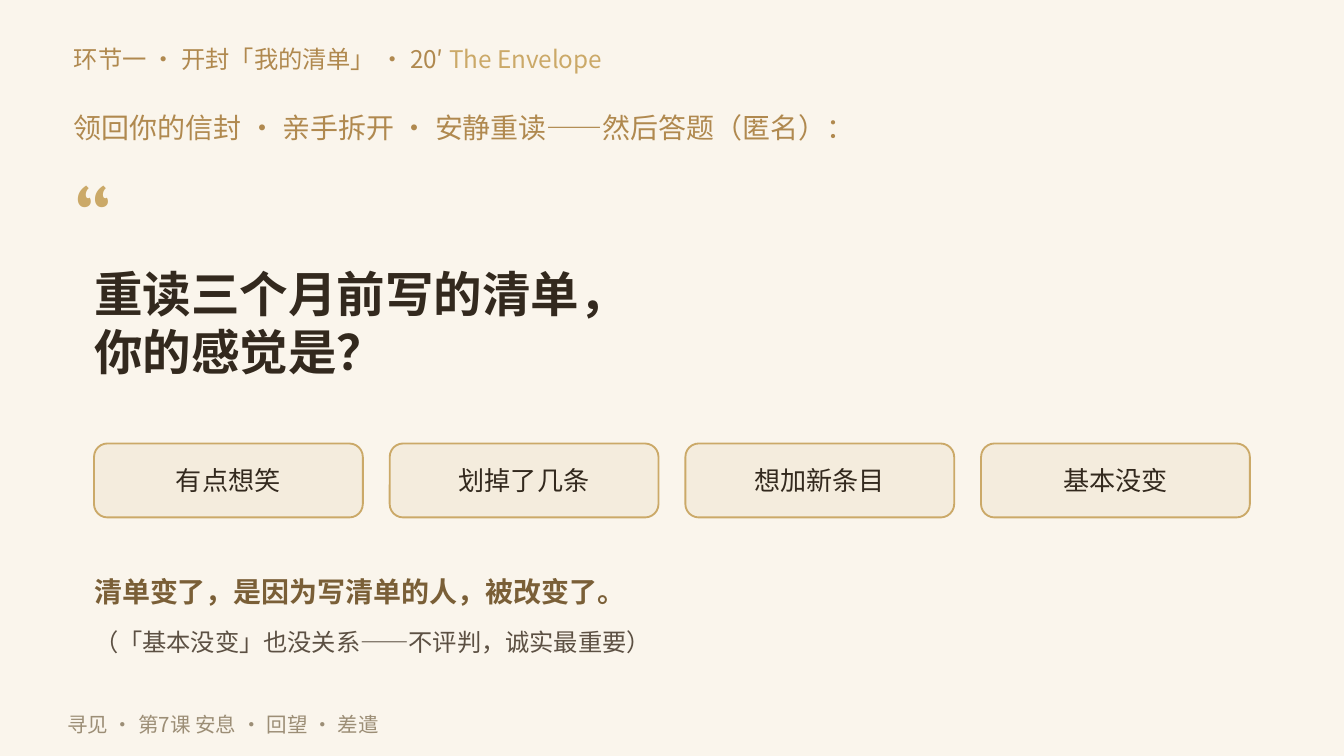
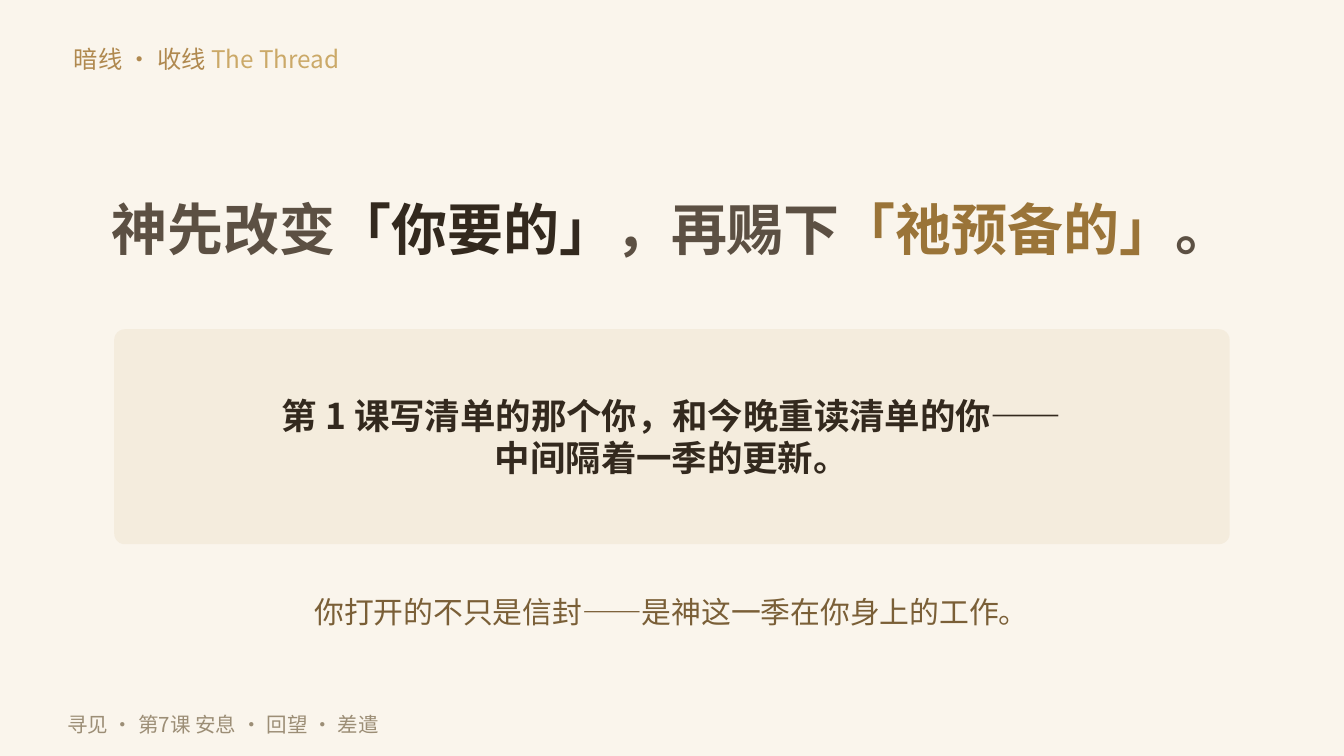
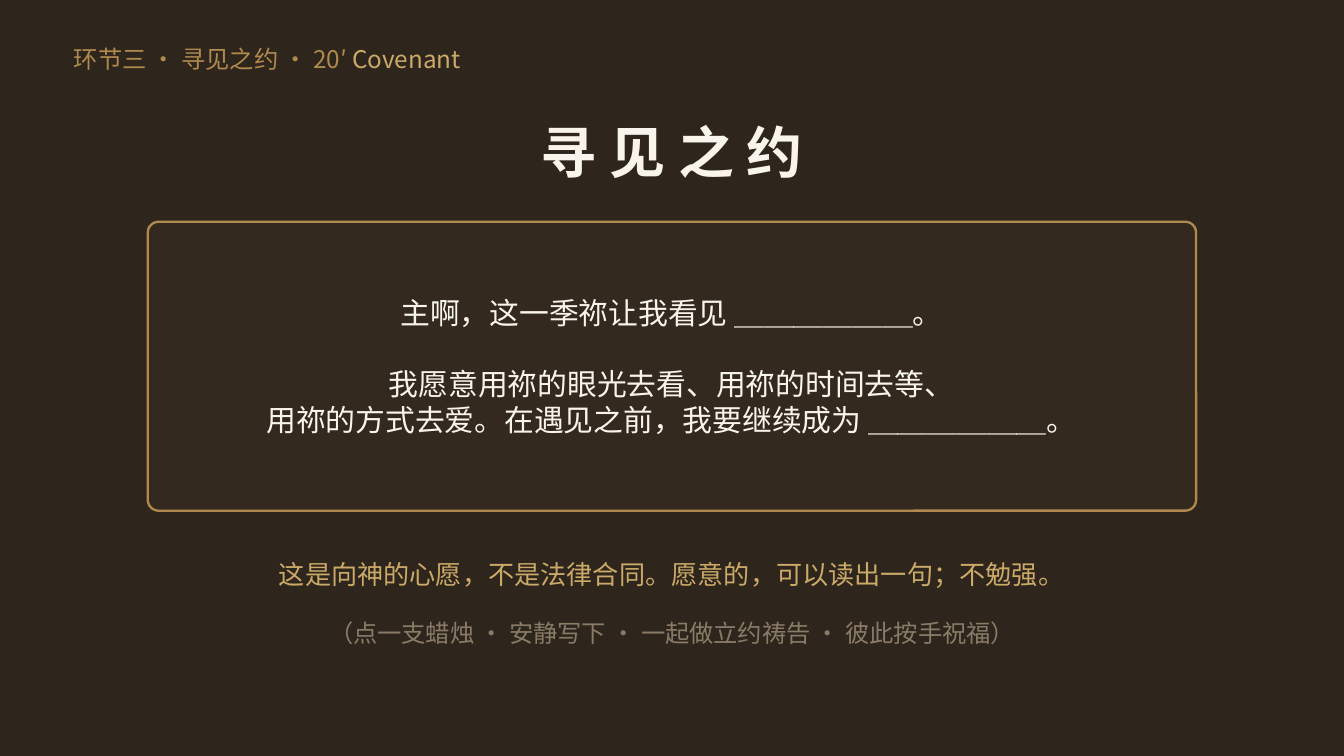
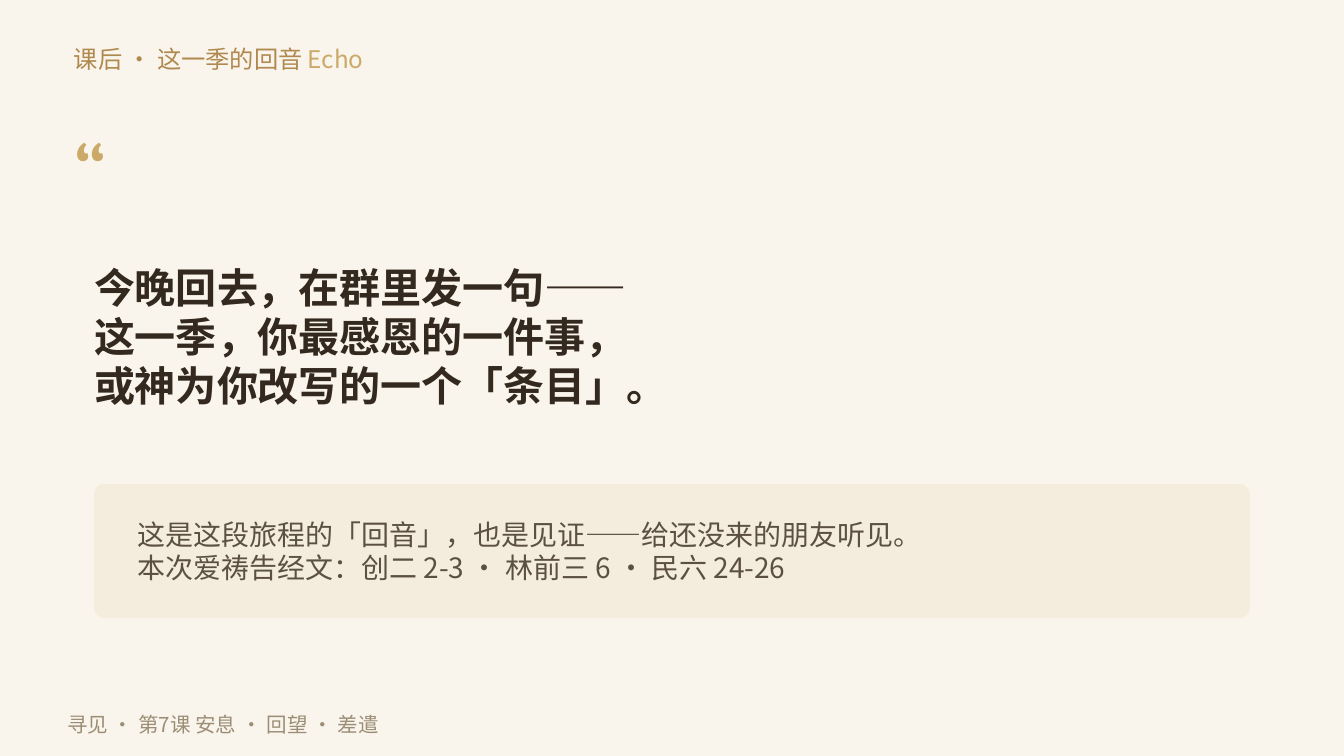
import pptx
import pptx.dml.color
import pptx.enum.shapes
import pptx.enum.text
import pptx.oxml.ns
import pptx.util
from lxml import etree

Inches = pptx.util.Inches
Align = pptx.enum.text.PP_ALIGN

COLORS = {
    "cream": "FAF5EC",
    "night": "2E261C",
    "ink": "33291E",
    "panel": "F4ECDD",
    "bronze": "B0894F",
    "gold": "CBA968",
    "ochre": "9A7438",
    "brown": "7A5F37",
    "umber": "5C5043",
    "taupe": "8A7B68",
    "footer": "9C8E76",
}
FONT = "Noto Sans CJK SC"
QUOTE_FONT = "Cambria"
LINE_FACTOR = 1.19
CARD_INSET = 0.3
FOOTER = "寻见 · 第7课 安息 · 回望 · 差遣"

PILLS = ["有点想笑", "划掉了几条", "想加新条目", "基本没变"]
PILL_LEFT, PILL_TOP, PILL_WIDTH, PILL_HEIGHT, PILL_GAP = 0.7, 3.3, 2, 0.55, 0.2

SLIDES = [
    {
        "title": ("环节一 · 开封「我的清单」 · 20′", "The Envelope"),
        "quote": ((0.55, 1.25, 1, 0.7), 56),
        "texts": [
            ((0.55, 0.75, 9, 0.4), ["领回你的信封 · 亲手拆开 · 安静重读——然后答题（匿名）："],
             dict(size=15, color="bronze")),
            ((0.7, 1.85, 8.5, 1.1), ["重读三个月前写的清单，", "你的感觉是？"],
             dict(size=26, color="ink", bold=True)),
            ((0.7, 4.2, 8.5, 0.4), ["清单变了，是因为写清单的人，被改变了。"],
             dict(size=15, color="brown", bold=True)),
            ((0.7, 4.6, 8.5, 0.35), ["（「基本没变」也没关系——不评判，诚实最重要）"],
             dict(size=13, color="umber")),
        ],
        "cards": [
            ((PILL_LEFT + index * (PILL_WIDTH + PILL_GAP), PILL_TOP, PILL_WIDTH, PILL_HEIGHT),
             [label], dict(line="gold", line_width=1, radius=0.1),
             dict(size=14, color="ink", align=Align.CENTER))
            for index, label in enumerate(PILLS)
        ],
    },
    {
        "title": ("暗线 · 收线", "The Thread"),
        "texts": [
            ((0.5, 1.35, 9, 0.7),
             [[("神先改变", "umber"), ("「你要的」", "ink"), ("，再赐下", "umber"),
               ("「祂预备的」", "ochre"), ("。", "umber")]],
             dict(size=30, bold=True, align=Align.CENTER)),
            ((0.55, 4.35, 8.9, 0.4), ["你打开的不只是信封——是神这一季在你身上的工作。"],
             dict(size=16, color="brown", align=Align.CENTER)),
        ],
        "cards": [
            ((0.85, 2.45, 8.3, 1.6),
             ["第 1 课写清单的那个你，和今晚重读清单的你——", "中间隔着一季的更新。"],
             {}, dict(size=19, color="ink", bold=True, align=Align.CENTER)),
        ],
    },
    {
        "title": ("环节三 · 寻见之约 · 20′", "Covenant"),
        "background": "night",
        "footer": False,
        "texts": [
            ((0.5, 0.85, 9, 0.55), ["寻 见 之 约"],
             dict(size=30, color="cream", bold=True, align=Align.CENTER)),
            ((0.5, 4.1, 9, 0.35), ["这是向神的心愿，不是法律合同。愿意的，可以读出一句；不勉强。"],
             dict(size=14, color="gold", align=Align.CENTER)),
            ((0.5, 4.55, 9, 0.32), ["（点一支蜡烛 · 安静写下 · 一起做立约祷告 · 彼此按手祝福）"],
             dict(size=13, color="taupe", align=Align.CENTER)),
        ],
        "cards": [
            ((1.1, 1.65, 7.8, 2.15),
             ["主啊，这一季祢让我看见 ＿＿＿＿＿＿。",
              "我愿意用祢的眼光去看、用祢的时间去等、",
              "用祢的方式去爱。在遇见之前，我要继续成为 ＿＿＿＿＿＿。"],
             dict(fill="ink", line="bronze", line_width=1.25),
             dict(size=16, color="cream", align=Align.CENTER, gaps={1: 19})),
        ],
    },
    {
        "title": ("课后 · 这一季的回音", "Echo"),
        "quote": ((0.55, 0.95, 1, 0.6), 48),
        "texts": [
            ((0.7, 1.7, 8.5, 1.6),
             ["今晚回去，在群里发一句——", "这一季，你最感恩的一件事，", "或神为你改写的一个「条目」。"],
             dict(size=22, color="ink", bold=True)),
        ],
        "cards": [
            ((0.7, 3.6, 8.6, 1),
             ["这是这段旅程的「回音」，也是见证——给还没来的朋友听见。",
              "本次爱祷告经文：创二 2-3 · 林前三 6 · 民六 24-26"],
             {}, dict(size=15, color="umber")),
        ],
    },
]


def rgb(name):
    return pptx.dml.color.RGBColor.from_string(COLORS[name])


def write_text(shape, lines, size, color=None, bold=False, align=Align.LEFT,
               font=FONT, inset=0, gaps=None):
    frame = shape.text_frame
    frame.word_wrap = True
    frame.auto_size = pptx.enum.text.MSO_AUTO_SIZE.NONE
    frame.vertical_anchor = pptx.enum.text.MSO_ANCHOR.MIDDLE
    frame.margin_left = frame.margin_right = Inches(inset)
    frame.margin_top = frame.margin_bottom = 0
    for index, line in enumerate(lines):
        paragraph = frame.add_paragraph() if index else frame.paragraphs[0]
        paragraph.alignment = align
        paragraph.space_before = pptx.util.Pt((gaps or {}).get(index, 0))
        if len(lines) > 1:
            paragraph.line_spacing = pptx.util.Pt(round(size * LINE_FACTOR, 1))
        for text, run_color in [(line, color)] if isinstance(line, str) else line:
            run = paragraph.add_run()
            run.text = text
            run.font.size = pptx.util.Pt(size)
            run.font.bold = bold
            run.font.color.rgb = rgb(run_color)
            run.font.name = font
            east_asian = etree.Element(pptx.oxml.ns.qn("a:ea"), typeface=font)
            run.font._element.find(pptx.oxml.ns.qn("a:latin")).addnext(east_asian)


def add_text(slide, box, lines, **text_format):
    shape = slide.shapes.add_textbox(*map(Inches, box))
    write_text(shape, lines, **text_format)


def add_card(slide, box, lines, text_format, fill="panel", line=None, line_width=1, radius=0.08):
    rounded = pptx.enum.shapes.MSO_SHAPE.ROUNDED_RECTANGLE
    shape = slide.shapes.add_shape(rounded, *map(Inches, box))
    shape.adjustments[0] = radius / min(box[2:])
    shape.shadow.inherit = False
    shape.fill.solid()
    shape.fill.fore_color.rgb = rgb(fill)
    if line:
        shape.line.color.rgb = rgb(line)
        shape.line.width = pptx.util.Pt(line_width)
    else:
        shape.line.fill.background()
    write_text(shape, lines, inset=CARD_INSET, **text_format)


def set_title(slide, chinese, english):
    title = slide.shapes.title
    title.left, title.top, title.width, title.height = map(Inches, (0.55, 0.28, 8.5, 0.32))
    write_text(title, [[(chinese + " ", "bronze"), (english, "gold")]], size=13)


def build_slide(presentation, content):
    slide = presentation.slides.add_slide(presentation.slide_layouts[5])
    slide.background.fill.solid()
    slide.background.fill.fore_color.rgb = rgb(content.get("background", "cream"))
    set_title(slide, *content["title"])
    if "quote" in content:
        box, size = content["quote"]
        add_text(slide, box, ["“"], size=size, color="gold", font=QUOTE_FONT)
    for box, lines, text_format in content["texts"]:
        add_text(slide, box, lines, **text_format)
    for box, lines, card_format, text_format in content["cards"]:
        add_card(slide, box, lines, text_format, **card_format)
    if content.get("footer", True):
        add_text(slide, (0.5, 5.25, 7.5, 0.28), [FOOTER], size=11, color="footer")


def main():
    presentation = pptx.Presentation()
    presentation.slide_width = Inches(10)
    presentation.slide_height = Inches(10) * 9 // 16
    for content in SLIDES:
        build_slide(presentation, content)
    presentation.save("out.pptx")


if __name__ == "__main__":
    main()
